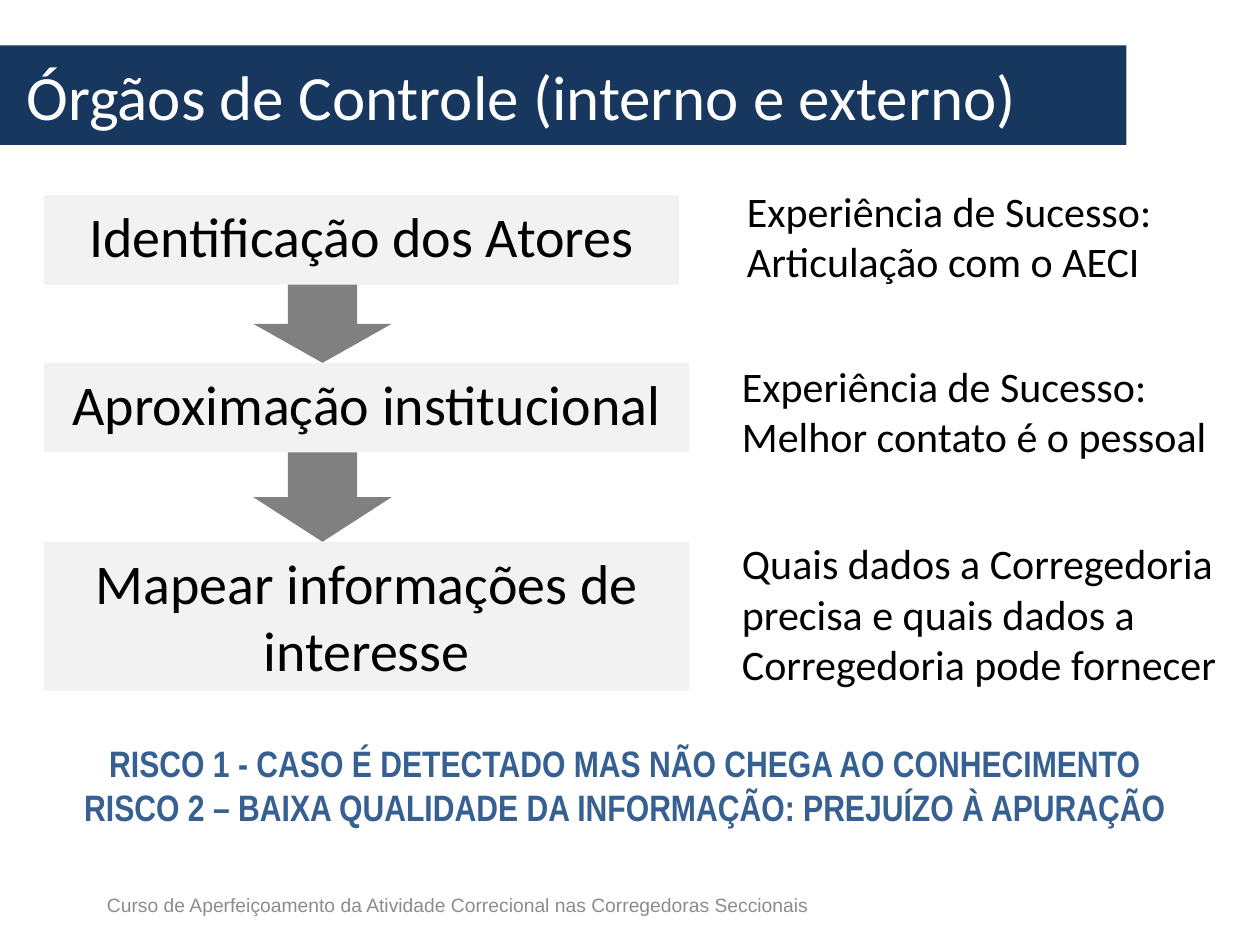
from pptx import Presentation
from pptx.dml.color import RGBColor
from pptx.enum.shapes import MSO_SHAPE
from pptx.enum.text import MSO_ANCHOR, MSO_AUTO_SIZE, PP_ALIGN
from pptx.util import Inches, Pt

LEFT, CENTER = PP_ALIGN.LEFT, PP_ALIGN.CENTER
TOP, MIDDLE = MSO_ANCHOR.TOP, MSO_ANCHOR.MIDDLE
RECT, DOWN_ARROW = MSO_SHAPE.RECTANGLE, MSO_SHAPE.DOWN_ARROW

COLORS = {
    "navy": "17375E",
    "blue": "376092",
    "panel": "F2F2F2",
    "arrow": "808080",
    "footer": "8C8C8C",
    "black": "000000",
    "white": "FFFFFF",
}


def write(sp, *lines, size, font="Calibri", color="black", bold=False,
          align=LEFT, anchor=TOP, after=0):
    tf = sp.text_frame
    tf.word_wrap = True
    tf.auto_size = MSO_AUTO_SIZE.NONE
    tf.vertical_anchor = anchor
    for i, line in enumerate(lines):
        p = tf.paragraphs[0] if i == 0 else tf.add_paragraph()
        p.alignment = align
        p.space_before, p.space_after = Pt(0), Pt(after)
        r = p.add_run()
        r.text = line
        r.font.name, r.font.size, r.font.bold = font, Pt(size), bold
        r.font.color.rgb = RGBColor.from_string(COLORS[color])
    return tf


def add_block(kind, left, top, width, height, color):
    sp = s.shapes.add_shape(kind, Inches(left), Inches(top), Inches(width), Inches(height))
    sp.shadow.inherit = False
    sp.fill.solid()
    sp.fill.fore_color.rgb = RGBColor.from_string(COLORS[color])
    sp.line.fill.background()
    return sp


prs = Presentation()
prs.slide_width, prs.slide_height = Inches(10), Inches(7.5)
s = prs.slides.add_slide(prs.slide_layouts[5])

# Title bar
title = s.shapes.title
title.left, title.top = Inches(0), Inches(0.36)
title.width, title.height = Inches(8.94), Inches(0.79)
title.fill.solid()
title.fill.fore_color.rgb = RGBColor.from_string(COLORS["navy"])
tf = write(title, "Órgãos de Controle (interno e externo)", size=36, color="white", anchor=MIDDLE)
tf.margin_left = Inches(0.21)

# Steps: text, top, width, height
steps = [
    ("Identificação dos Atores", 1.55, 5.04, 0.71),
    ("Aproximação institucional", 2.88, 5.12, 0.71),
    ("Mapear informações de interesse", 4.3, 5.12, 1.18),
]
for text, top, width, height in steps:
    sp = add_block(RECT, 0.35, top, width, height, "panel")
    write(sp, text, size=32, align=CENTER)

# Arrows fill the gaps between consecutive steps
for (_, top, _, height), (_, next_top, _, _) in zip(steps, steps[1:]):
    bottom = top + height
    add_block(DOWN_ARROW, 2.01, bottom, 1.1, next_top - bottom, "arrow")

# Comments beside the steps: text, left, top, height
comments = [
    ("Experiência de Sucesso: Articulação com o AECI", 5.83, 1.42, 0.91),
    ("Experiência de Sucesso: Melhor contato é o pessoal", 5.79, 2.81, 0.91),
    ("Quais dados a Corregedoria precisa e quais dados a Corregedoria pode fornecer",
     5.79, 4.22, 1.31),
]
for text, left, top, height in comments:
    sp = s.shapes.add_textbox(Inches(left), Inches(top), Inches(4.21), Inches(height))
    write(sp, text, size=24, after=12)

# Risks
sp = s.shapes.add_textbox(Inches(-0.12), Inches(5.82), Inches(10.16), Inches(0.82))
tf = write(sp, "RISCO 1 - CASO É DETECTADO MAS NÃO CHEGA AO CONHECIMENTO",
           "RISCO 2 – BAIXA QUALIDADE DA INFORMAÇÃO: PREJUÍZO À APURAÇÃO",
           size=21, font="Arial Narrow", color="blue", bold=True, align=CENTER)
tf.margin_left = tf.margin_right = Inches(0.11)
tf.margin_top = tf.margin_bottom = Inches(0.06)

# Footer
sp = s.shapes.add_textbox(Inches(0.75), Inches(6.94), Inches(8.62), Inches(0.48))
write(sp, "Curso de Aperfeiçoamento da Atividade Correcional nas Corregedoras Seccionais",
      size=11, font="Arial", color="footer", anchor=MIDDLE)

prs.save("out.pptx")
